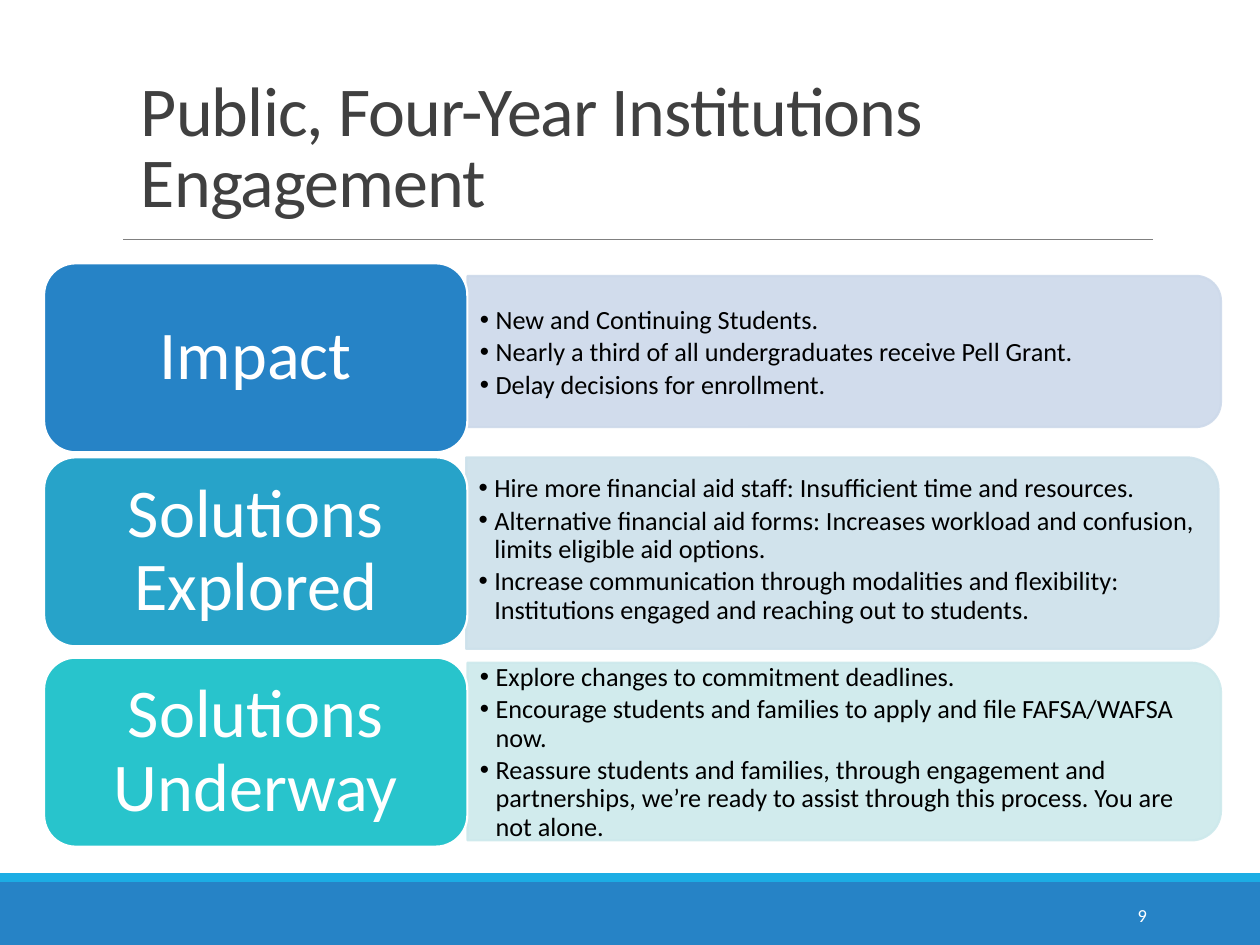
from dataclasses import dataclass

from lxml import etree
from pptx import Presentation
from pptx import util as u
from pptx.dml.color import RGBColor
from pptx.enum import shapes, text
from pptx.oxml.ns import qn

BLUE = RGBColor(0x26, 0x83, 0xC6)
SKY = RGBColor(0x1C, 0xAD, 0xE4)
TEAL = RGBColor(0x27, 0xA3, 0xC9)
AQUA = RGBColor(0x28, 0xC4, 0xCC)
PALE_BLUE = RGBColor(0xCD, 0xD9, 0xEA)
PALE_TEAL = RGBColor(0xCD, 0xE1, 0xEB)
PALE_AQUA = RGBColor(0xCD, 0xE9, 0xEC)
GRAY = RGBColor(0x80, 0x80, 0x80)
DARK = RGBColor(0x40, 0x40, 0x40)
BLACK = RGBColor(0, 0, 0)
WHITE = RGBColor(0xFF, 0xFF, 0xFF)

# The slide is a grid of 100 columns by 75 rows
prs = Presentation()
prs.slide_width, prs.slide_height = u.Inches(10), u.Inches(7.5)
CELL = prs.slide_width // 100
LABEL_X, LABEL_W, LABEL_H = 3.5, 33.6, 15
PANEL_X = LABEL_X + LABEL_W

TITLE = dict(size=u.Pt(40), color=DARK)
NUMBER = dict(size=u.Pt(10.5), color=WHITE)
LABEL = dict(size=u.Pt(39), color=WHITE)
BULLET = dict(size=u.Pt(15), color=BLACK)


@dataclass
class Box:
    x: float
    y: float
    w: float
    h: float

    def emu(self) -> list[int]:
        return [round(v * CELL) for v in (self.x, self.y, self.w, self.h)]


@dataclass
class Band:
    label: str
    label_y: float
    color: RGBColor
    panel: Box
    pale: RGBColor
    body: Box
    insets: tuple[float, float, float, float]
    points: list[str]


BANDS = [
    Band("Impact", 20.9, BLUE, Box(PANEL_X, 21.9, 59.8, 12), PALE_BLUE,
         Box(PANEL_X, 22.6, 59.2, 10.9), (1, 1.4, 2.7, 1.4),
         ["New and Continuing Students.",
          "Nearly a third of all undergraduates receive Pell Grant.",
          "Delay decisions for enrollment."]),
    Band("Solutions Explored", 36.3, TEAL, Box(37, 36.3, 59.7, 15.2), PALE_TEAL,
         Box(37, 37, 58.9, 13.7), (1, 1, 0.6, 1.4),
         ["Hire more financial aid staff: Insufficient time and resources.",
          "Alternative financial aid forms: Increases workload and confusion, "
          "limits eligible aid options.",
          "Increase communication through modalities and flexibility: "
          "Institutions engaged and reaching out to students."]),
    Band("Solutions Underway", 52.2, AQUA, Box(PANEL_X, 52.6, 59.8, 14.1), PALE_AQUA,
         Box(PANEL_X, 53.4, 59.1, 12.7), (1, 1.4, 0, 1.4),
         ["Explore changes to commitment deadlines.",
          "Encourage students and families to apply and file FAFSA/WAFSA now.",
          "Reassure students and families, through engagement and partnerships, "
          "we’re ready to assist through this process. You are not alone."]),
]


def add_block(s, kind, box: Box, fill: RGBColor, line: RGBColor | None = None):
    sp = s.shapes.add_shape(kind, *box.emu())
    sp.shadow.inherit = False
    sp.fill.solid()
    sp.fill.fore_color.rgb = fill
    if line is None:
        sp.line.fill.background()
    else:
        sp.line.color.rgb = line
        sp.line.width = u.Pt(1.25)
    return sp


def write(sp, lines: list[str], font: dict, anchor, insets=(1, 0.5, 1, 0.5), **para):
    """Fill a shape with paragraphs; insets are left, top, right, bottom in cells."""
    tf = sp.text_frame
    left, top, right, bottom = (round(v * CELL) for v in insets)
    frame = dict(word_wrap=True, vertical_anchor=anchor, margin_left=left,
                 margin_top=top, margin_right=right, margin_bottom=bottom)
    for name, value in frame.items():
        setattr(tf, name, value)
    for i, line in enumerate(lines):
        p = tf.paragraphs[0] if i == 0 else tf.add_paragraph()
        for name, value in para.items():
            setattr(p, name, value)
        r = p.add_run()
        r.text = line
        r.font.name, r.font.size = "Calibri", font["size"]
        r.font.color.rgb = font["color"]
    return tf


def add_bullets(tf) -> None:
    for p in tf.paragraphs:
        ppr = p._p.get_or_add_pPr()
        ppr.set("marL", str(round(1.25 * CELL)))
        ppr.set("indent", str(round(-1.25 * CELL)))
        etree.SubElement(ppr, qn("a:buFont")).set("typeface", "Arial")
        etree.SubElement(ppr, qn("a:buChar")).set("char", "•")


def add_panel(s, box: Box, color: RGBColor) -> None:
    """Panel with rounded right corners: an upright shape turned by 90 degrees."""
    shift = (box.w - box.h) / 2
    upright = Box(box.x + shift, box.y - shift, box.h, box.w)
    sp = add_block(s, shapes.MSO_SHAPE.ROUND_2_SAME_RECTANGLE, upright, color, color)
    sp.rotation = 90
    for clr in sp._element.spPr.iter(qn("a:srgbClr")):
        etree.SubElement(clr, qn("a:alpha")).set("val", "90000")


def add_band(s, band: Band) -> None:
    add_panel(s, band.panel, band.pale)
    body = s.shapes.add_textbox(*band.body.emu())
    add_bullets(write(body, band.points, BULLET, text.MSO_ANCHOR.MIDDLE, band.insets,
                      line_spacing=0.9, space_after=u.Pt(2.25)))
    label = add_block(s, shapes.MSO_SHAPE.ROUNDED_RECTANGLE,
                      Box(LABEL_X, band.label_y, LABEL_W, LABEL_H), band.color, WHITE)
    write(label, [band.label], LABEL, text.MSO_ANCHOR.MIDDLE, (1.6, 0.8, 1.6, 0.8),
          alignment=text.PP_ALIGN.CENTER, line_spacing=0.9)


def main() -> None:
    s = prs.slides.add_slide(prs.slide_layouts[6])

    # Footer bars
    add_block(s, shapes.MSO_SHAPE.RECTANGLE, Box(0, 70, 100, 5), BLUE)
    add_block(s, shapes.MSO_SHAPE.RECTANGLE, Box(0, 69.3, 100, 0.7), SKY)

    # Title and the rule below it
    rule = s.shapes.add_connector(shapes.MSO_CONNECTOR.STRAIGHT,
                                  *Box(9.8, 19, 91.5, 19).emu())
    rule.line.color.rgb, rule.line.width = GRAY, u.Pt(0.5)
    etree.SubElement(rule._element.spPr, qn("a:effectLst"))
    title = s.shapes.add_textbox(*Box(10.2, 2.2, 89.1, 15.9).emu())
    tf = write(title, ["Public, Four-Year Institutions Engagement"], TITLE,
               text.MSO_ANCHOR.BOTTOM, line_spacing=0.85)
    tf.paragraphs[0].runs[0].font._element.set("spc", "-50")

    # Slide number
    number = s.shapes.add_textbox(*Box(81.2, 70.6, 10.8, 4).emu())
    write(number, ["9"], NUMBER, text.MSO_ANCHOR.MIDDLE, alignment=text.PP_ALIGN.RIGHT)

    # Bands: label on the left, points on the right
    for band in BANDS:
        add_band(s, band)

    prs.save("out.pptx")


if __name__ == "__main__":
    main()
